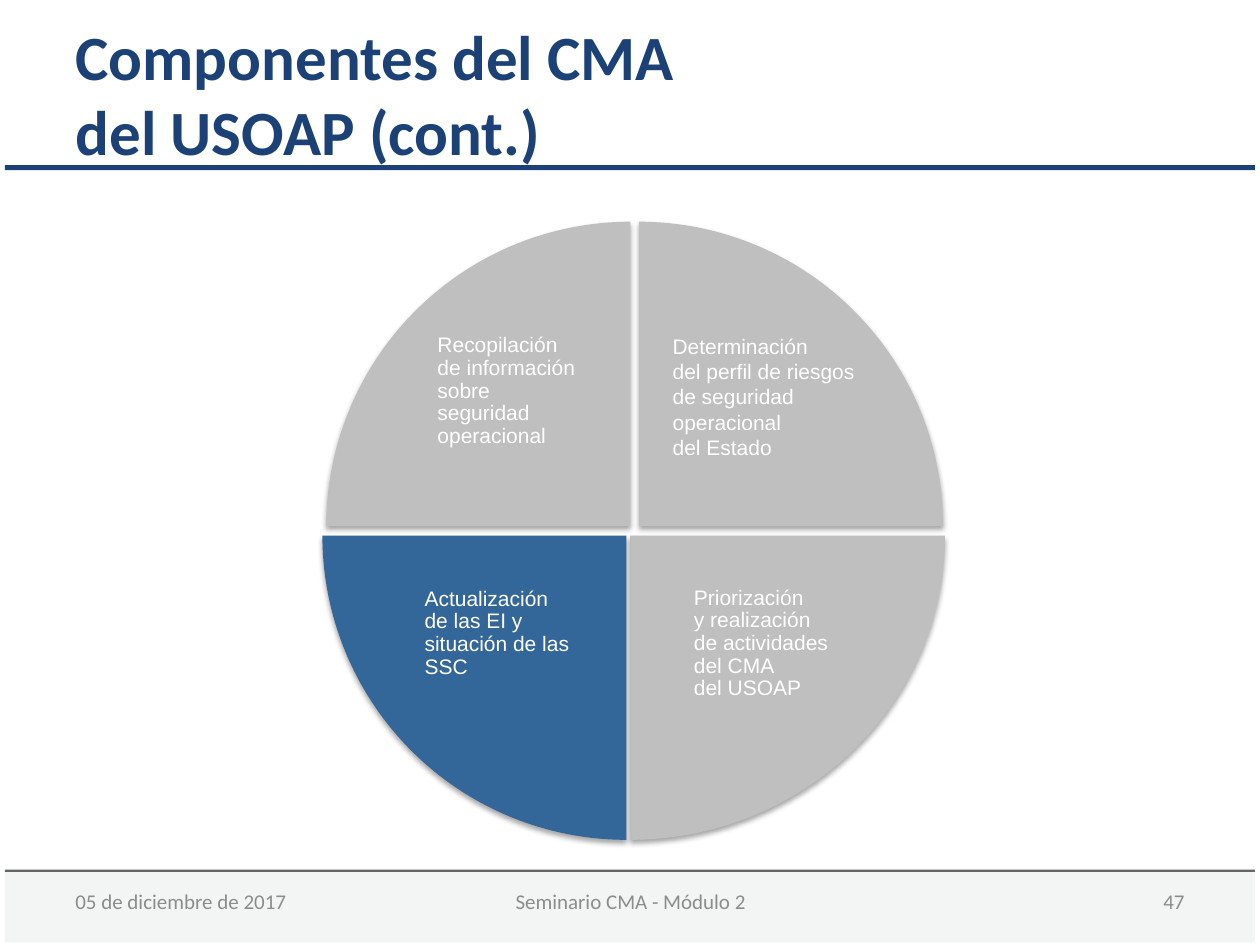
from lxml import etree
from pptx import Presentation
from pptx.dml.color import RGBColor
from pptx.enum.shapes import MSO_SHAPE
from pptx.enum.text import MSO_ANCHOR, MSO_AUTO_SIZE, PP_ALIGN
from pptx.oxml.ns import qn
from pptx.util import Cm, Pt

RECT, WEDGE = MSO_SHAPE.RECTANGLE, MSO_SHAPE.PIE_WEDGE
TOP, MID = MSO_ANCHOR.TOP, MSO_ANCHOR.MIDDLE
LEFT, CENTER, RIGHT = PP_ALIGN.LEFT, PP_ALIGN.CENTER, PP_ALIGN.RIGHT
FIXED = MSO_AUTO_SIZE.NONE
NAVY, BLUE, GREY, WHITE = "1B4177", "336699", "BFBFBF", "FFFFFF"
PALE, RULE, MUTED = "F3F4F4", "666666", "8C8C8C"

# Wedge: x, y, width, turn, fill; label: x, y, width, height, spacing, text
PARTS = [
    ((6.38, 0, 6.13, 90, GREY),
     (6.81, 2.13, 4.8, 2.82, 1.0,
      "Determinación\vdel perfil de riesgos\vde seguridad operacional\n"
      "del Estado")),
    ((6.2, 6.33, 6.35, 180, GREY),
     (7.24, 7.24, 3.81, 2.57, 0.9,
      "Priorización\vy realización\vde actividades\vdel CMA\vdel USOAP")),
    ((0, 6.33, 6.13, 270, BLUE),
     (1.81, 7.26, 3.61, 2.11, 0.9,
      "Actualización\vde las EI y situación de las SSC")),
    ((0.08, 0, 6.13, 0, GREY),
     (2.07, 2.15, 3.4, 2.36, 0.9,
      "Recopilación de información sobre seguridad operacional")),
]


def color(code):
    return RGBColor.from_string(code)


def style(frame, size, font, code, bold=False, align=LEFT, space=1.0):
    for para in frame.paragraphs:
        para.alignment = align
        para.line_spacing = space
        for run in para.runs:
            run.font.size = Pt(size)
            run.font.name = font
            run.font.bold = bold
            run.font.color.rgb = color(code)


def add_text(slide, box, text, font, code, align=LEFT, anchor=TOP, space=1.0):
    frame = slide.shapes.add_textbox(*map(Cm, box)).text_frame
    frame.word_wrap = True
    frame.vertical_anchor = anchor
    frame.text = text
    style(frame, 12, font, code, align=align, space=space)


def add_solid(slide, kind, box, code):
    shape = slide.shapes.add_shape(kind, *map(Cm, box))
    shape.shadow.inherit = False
    shape.fill.solid()
    shape.fill.fore_color.rgb = color(code)
    shape.line.fill.background()
    return shape


def add_shadow(shape):
    effects = shape._element.spPr.find(qn("a:effectLst"))
    outer = etree.SubElement(
        effects, qn("a:outerShdw"), blurRad=str(Pt(3.1)), dist=str(Pt(1.8)),
        dir="5400000", rotWithShape="0")
    black = etree.SubElement(outer, qn("a:srgbClr"), val="000000")
    etree.SubElement(black, qn("a:alpha"), val="35000")


def add_head(slide, x, y, wide, high):
    add_solid(slide, RECT, (x - 1.17, y + 3.05, 25.2, 0.1), NAVY)
    title = slide.shapes.title
    title.left, title.top, title.width, title.height = map(
        Cm, (x, y, wide, high))
    frame = title.text_frame
    frame.text = "Componentes del CMA\vdel USOAP (cont.)"
    frame.auto_size = FIXED
    frame.vertical_anchor = MID
    style(frame, 36, "Calibri", NAVY, bold=True)
    # Keep the title in front of its rule
    slide.shapes._spTree.append(title._element)


def add_wheel(slide, x, y):
    # Four quarters, each turned about its own centre
    for (left, top, wide, turn, code), _ in PARTS:
        wedge = add_solid(slide, WEDGE, (x + left, y + top, wide, 6.13), code)
        wedge.rotation = turn
        add_shadow(wedge)
    # Labels
    for _, (left, top, wide, high, space, text) in PARTS:
        add_text(slide, (x + left, y + top, wide, high), text, "Arial", WHITE,
                 space=space)


def add_foot(slide, x, y, wide, high):
    add_solid(slide, RECT, (x, y, wide, high), PALE)
    add_solid(slide, RECT, (x, y, wide, 0.05), RULE)
    for left, span, align, text in (
            (1.17, 5.92, LEFT, "05 de diciembre de 2017"),
            (8.59, 8.05, CENTER, "Seminario CMA - Módulo 2"),
            (18.11, 5.92, RIGHT, "47")):
        add_text(slide, (x + left, y + 0.12, span, 1.02), text, "Calibri",
                 MUTED, align, MID)


def main():
    deck = Presentation()
    deck.slide_width, deck.slide_height = Cm(25.4), Cm(19.05)
    slide = deck.slides.add_slide(deck.slide_layouts[5])
    add_foot(slide, 0.1, 17.53, 25.2, 1.47)
    add_head(slide, 1.27, 0.28, 22.86, 3.18)
    add_wheel(slide, 6.5, 4.47)
    deck.save("out.pptx")


if __name__ == "__main__":
    main()
